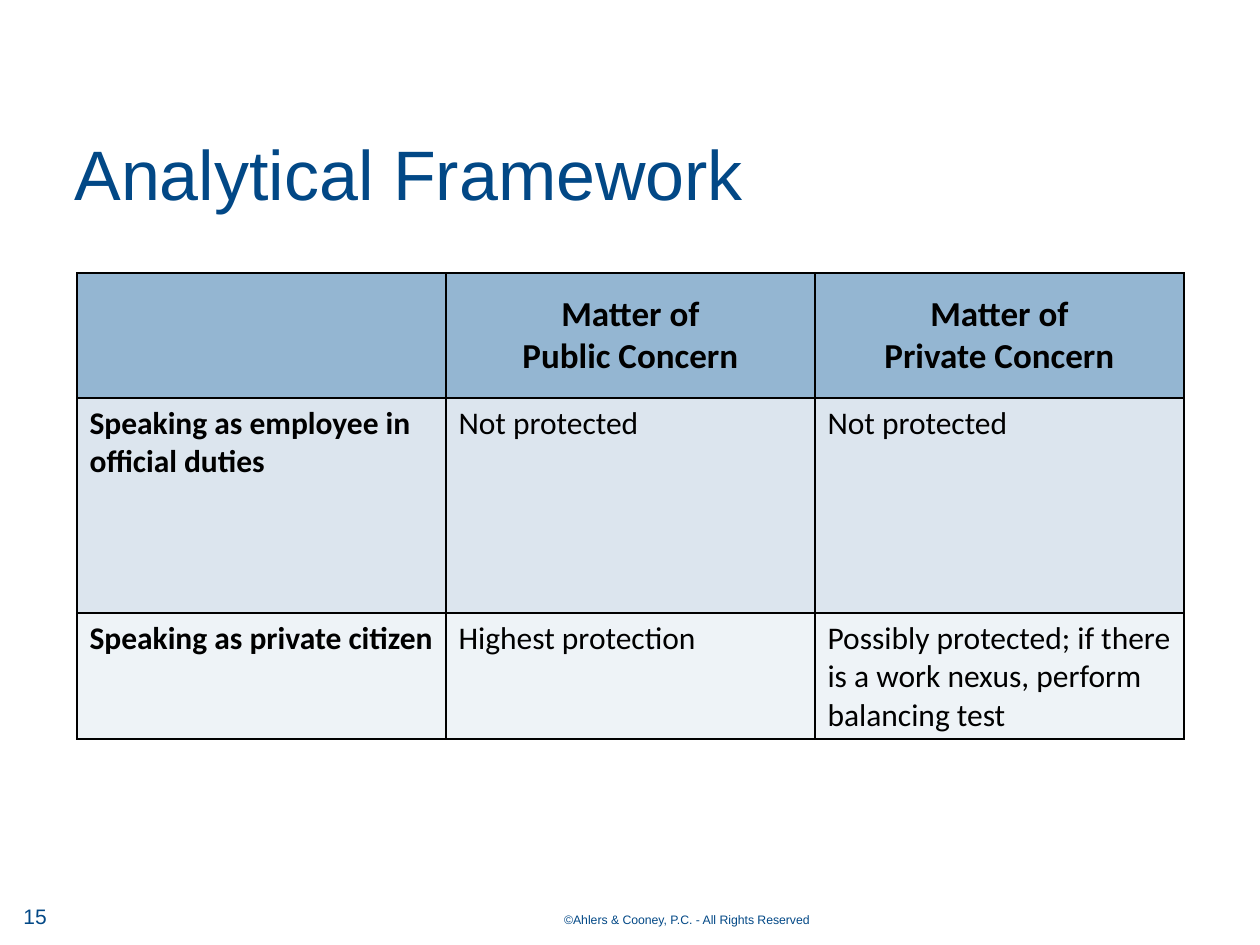
import pptx
import pptx.dml.color
import pptx.enum.text
import pptx.oxml.ns
import pptx.util
from lxml import etree

PX = 914400 / 126
NAVY = pptx.dml.color.RGBColor(0x02, 0x48, 0x86)
BLACK = pptx.dml.color.RGBColor(0x00, 0x00, 0x00)
HEADER_BLUE = pptx.dml.color.RGBColor(0x94, 0xB6, 0xD2)
ROW_BLUE = pptx.dml.color.RGBColor(0xDC, 0xE5, 0xEE)
ROW_PALE = pptx.dml.color.RGBColor(0xEE, 0xF3, 0xF7)
ALIGN = pptx.enum.text.PP_ALIGN
ANCHOR = pptx.enum.text.MSO_ANCHOR

TITLE_FORMAT = {"name": "Arial", "size": pptx.util.Pt(40)}
NUMBER_FORMAT = {"name": "Arial", "size": pptx.util.Pt(12)}
FOOTER_FORMAT = {"name": "Arial", "size": pptx.util.Pt(7)}
HEADER_FORMAT = {"name": "Calibri", "size": pptx.util.Pt(20), "bold": True}
LABEL_FORMAT = {"name": "Calibri", "size": pptx.util.Pt(18), "bold": True}
BODY_FORMAT = {"name": "Calibri", "size": pptx.util.Pt(18), "bold": False}

HEADINGS = ["", "Matter of\vPublic Concern", "Matter of\vPrivate Concern"]
FINDINGS = [
    ["Speaking as employee in official duties", "Not protected", "Not protected"],
    [
        "Speaking as private citizen",
        "Highest protection",
        "Possibly protected; if there is a work nexus, perform balancing test",
    ],
]


def emu(pixels):
    """Turn pixels into EMU."""
    return pptx.util.Emu(round(pixels * PX))


def write_text(text_frame, text, formats, color, alignment=ALIGN.LEFT):
    """Write one formatted paragraph into a text frame."""
    paragraph = text_frame.paragraphs[0]
    paragraph.text = text
    paragraph.alignment = alignment
    for run in paragraph.runs:
        for name, value in formats.items():
            setattr(run.font, name, value)
        run.font.color.rgb = color
    return paragraph


def add_text(slide, box, text, formats, anchor=ANCHOR.MIDDLE, alignment=ALIGN.LEFT):
    """Add a navy text box and return its paragraph."""
    text_frame = slide.shapes.add_textbox(*map(emu, box)).text_frame
    text_frame.word_wrap = True
    text_frame.vertical_anchor = anchor
    return write_text(text_frame, text, formats, NAVY, alignment)


def add_title(slide, box):
    """Add the slide title."""
    paragraph = add_text(slide, box, "Analytical Framework", TITLE_FORMAT)
    paragraph.line_spacing = 0.9


def add_footer(slide, box):
    """Add the slide number and the copyright line."""
    left, top, width, height = box
    add_text(slide, (left, top, 284, height), "15", NUMBER_FORMAT)
    add_text(
        slide,
        (left + 477, top + 15, 334, height - 12),
        "©Ahlers & Cooney, P.C. - All Rights Reserved",
        FOOTER_FORMAT,
        ANCHOR.TOP,
        ALIGN.RIGHT,
    )


def draw_borders(cell):
    """Give a cell a thin black line on each side."""
    properties = cell._tc.get_or_add_tcPr()
    qualified = pptx.oxml.ns.qn
    for side in ("a:lnL", "a:lnR", "a:lnT", "a:lnB"):
        line = etree.SubElement(properties, qualified(side), w=str(pptx.util.Pt(1)))
        fill = etree.SubElement(line, qualified("a:solidFill"))
        etree.SubElement(fill, qualified("a:srgbClr"), val=str(BLACK))


def fill_cell(cell, text, color, formats, anchor, alignment):
    """Set the borders, fill and text of one cell."""
    draw_borders(cell)
    cell.fill.solid()
    cell.fill.fore_color.rgb = color
    cell.vertical_anchor = anchor
    write_text(cell.text_frame, text, formats, BLACK, alignment)


def add_framework_table(slide, box):
    """Add the table of speaker roles against matters of concern."""
    left, top, width, height = box
    rows = [HEADINGS, *FINDINGS]
    table = slide.shapes.add_table(len(rows), len(HEADINGS), *map(emu, box)).table
    for column in table.columns:
        column.width = emu(width // len(HEADINGS))
    outer_height = 125
    heights = [outer_height, height - 2 * outer_height, outer_height]
    for row, row_height in zip(table.rows, heights):
        row.height = emu(row_height)
    for column_index, heading in enumerate(HEADINGS):
        cell = table.cell(0, column_index)
        fill_cell(cell, heading, HEADER_BLUE, HEADER_FORMAT, ANCHOR.MIDDLE, ALIGN.CENTER)
    for row_index, color in enumerate((ROW_BLUE, ROW_PALE), start=1):
        for column_index, text in enumerate(rows[row_index]):
            formats = BODY_FORMAT if column_index else LABEL_FORMAT
            cell = table.cell(row_index, column_index)
            fill_cell(cell, text, color, formats, ANCHOR.TOP, ALIGN.LEFT)


def main():
    """Build and save the presentation."""
    presentation = pptx.Presentation()
    presentation.slide_width = emu(1260)
    presentation.slide_height = emu(945)
    slide = presentation.slides.add_slide(presentation.slide_layouts[6])
    add_footer(slide, (11, 891, 1238, 50))
    add_framework_table(slide, (77, 273, 1107, 465))
    add_title(slide, (62, 108, 1164, 139))
    presentation.save("out.pptx")


if __name__ == "__main__":
    main()
